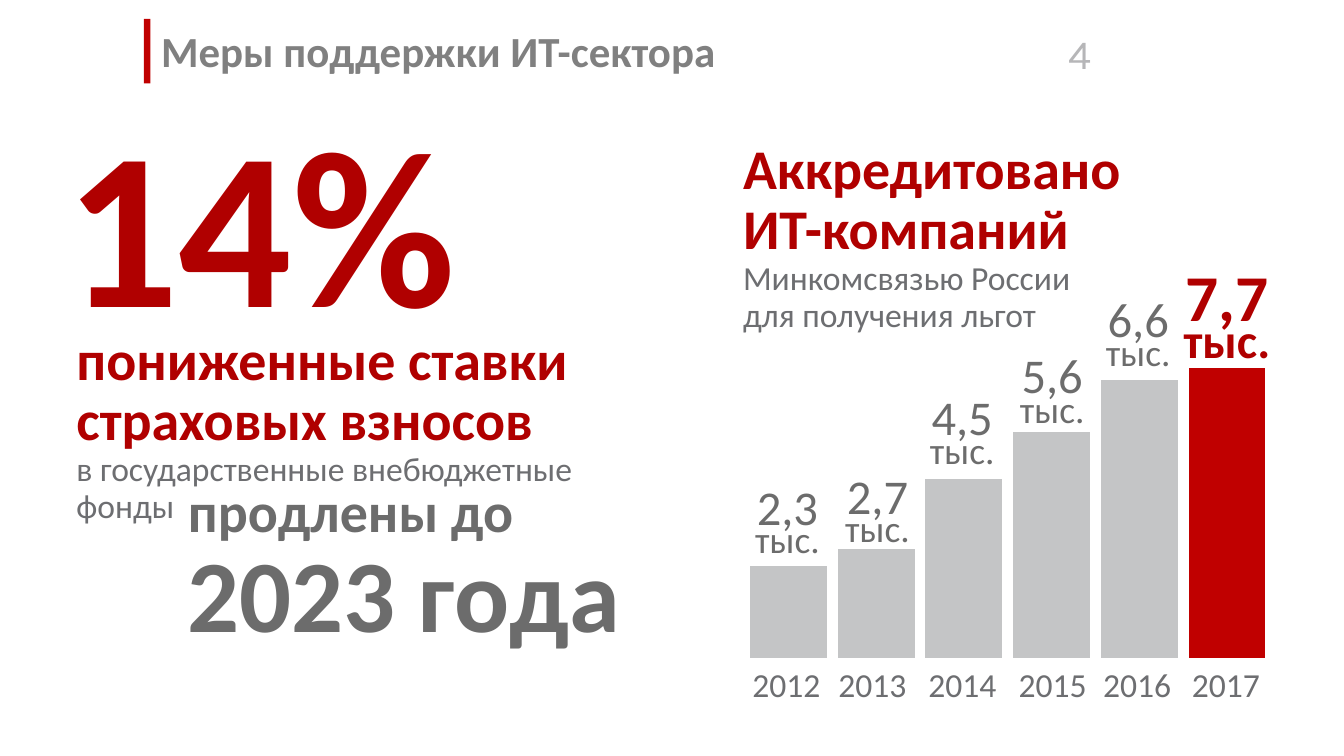
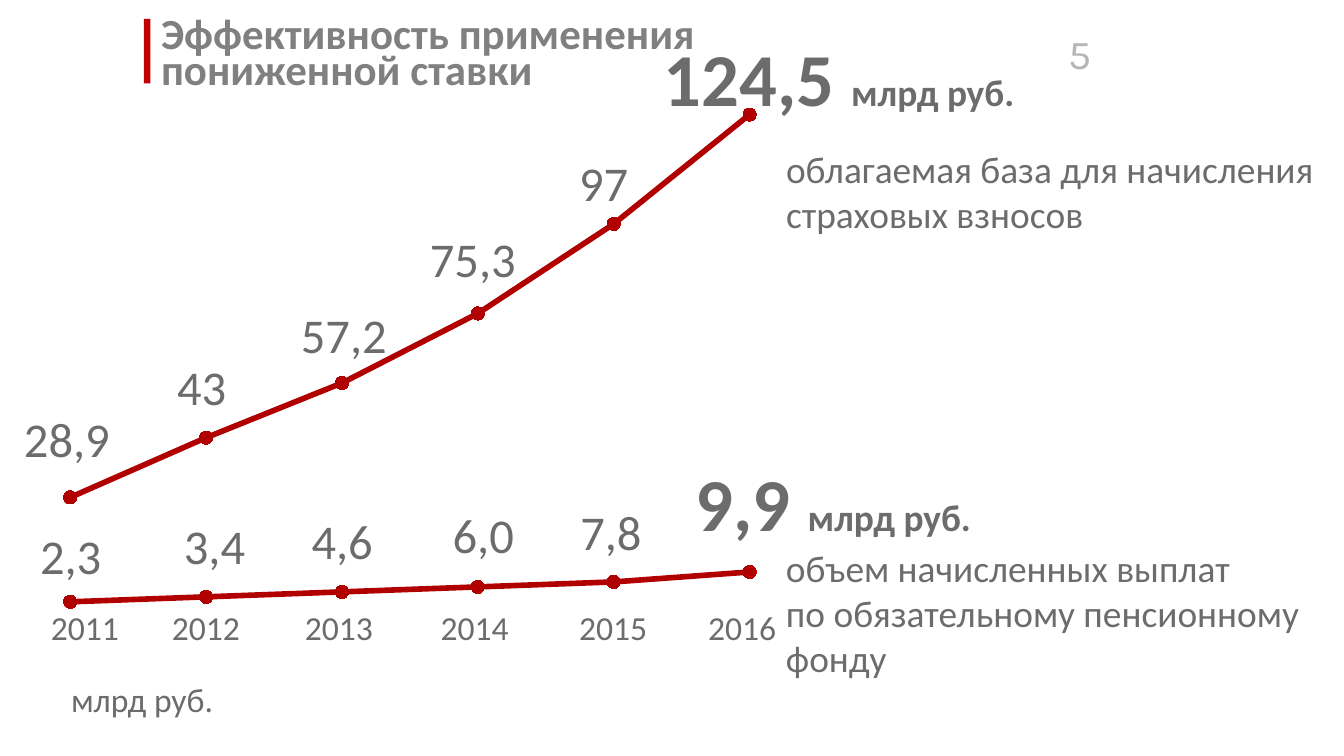
import dataclasses

import lxml.etree
import pptx
import pptx.chart.data
import pptx.dml.color
import pptx.enum.chart
import pptx.enum.shapes
import pptx.enum.text
import pptx.oxml.ns
import pptx.util

PX = 9144
GAP = chr(160)
ALIGN = pptx.enum.text.PP_ALIGN
ANCHOR = pptx.enum.text.MSO_ANCHOR
KIND = pptx.enum.chart.XL_CHART_TYPE


@dataclasses.dataclass(frozen=True)
class Theme:
    """Colours, fonts and type sizes of the deck."""
    face: str = "Calibri"
    digit: str = "Karla"
    mark: str = "C00000"
    red: str = "B00000"
    head: str = "808080"
    page: str = "B6B6B8"
    dark: str = "6C6C6C"
    gray: str = "6D6E71"
    bar: str = "C4C5C6"
    white: str = "FFFFFF"
    huge: int = 120
    year: int = 55
    total: int = 40
    peak: int = 35
    lead: int = 30
    value: int = 26
    title: int = 23
    number: int = 22
    note: int = 20
    small: int = 18


THEME = Theme()


def rgb(code):
    """Turn a hex code into a colour."""
    return pptx.dml.color.RGBColor.from_string(code)


def style(size, color, bold=False, name=THEME.face):
    """Return font values for a run or chart."""
    return dict(size=pptx.util.Pt(size), color=color, bold=bold, name=name)


def paint(font, values):
    """Set font values from a dict."""
    for key, value in values.items():
        if key == "color":
            font.color.rgb = rgb(value)
        else:
            setattr(font, key, value)


def place(box, x, y, w, h):
    """Return EMU lengths of a part, offset from its region."""
    return [n * PX for n in (box[0] + x, box[1] + y, w, h)]


def write(slide, spot, paras, gap=1.0, align=ALIGN.LEFT, wrap=True, grow=True):
    """Add a text box whose paragraphs are lists of (text, style) runs."""
    frame = slide.shapes.add_textbox(*spot).text_frame
    sizes = pptx.enum.text.MSO_AUTO_SIZE
    values = dict(word_wrap=wrap, vertical_anchor=ANCHOR.TOP,
                  auto_size=sizes.SHAPE_TO_FIT_TEXT if grow else sizes.NONE)
    for key, value in values.items():
        setattr(frame, key, value)
    for index, runs in enumerate(paras):
        para = frame.add_paragraph() if index else frame.paragraphs[0]
        para.alignment, para.line_spacing = align, gap
        for text, look in runs:
            run = para.add_run()
            run.text = text
            paint(run.font, look)
    return frame


def header(slide, box, title, number):
    """Draw the red mark, the title and the page number."""
    mark = slide.shapes.add_shape(pptx.enum.shapes.MSO_SHAPE.RECTANGLE,
                                  *place(box, 0, 4, 5, 48))
    mark.shadow.inherit = False
    mark.fill.solid()
    mark.fill.fore_color.rgb = rgb(THEME.mark)
    mark.line.fill.background()
    look = style(THEME.number, THEME.page, name=THEME.digit)
    page = write(slide, place(box, 653, 7, 59, 44), [[(number, look)]],
                 align=ALIGN.RIGHT, grow=False)
    for side in ("left", "right", "top", "bottom"):
        setattr(page, "margin_" + side, (7 if side in ("left", "right") else 4) * PX)
    look = style(THEME.title, THEME.head, True)
    name = write(slide, place(box, 3, 0, 587, 59), [[(title, look)]], 0.7, grow=False)
    name.vertical_anchor = ANCHOR.MIDDLE
    name.margin_top = 10 * PX


def plot(slide, box, kind, rows, area, top):
    """Add a bare chart with a fixed plot area and value range."""
    data = pptx.chart.data.CategoryChartData()
    data.categories = [str(n + 1) for n in range(len(rows[0]))]
    for index, row in enumerate(rows, 1):
        data.add_series(f"Series {index}", row)
    chart = slide.shapes.add_chart(kind, *place(box, 0, 0, *box[2:]), data).chart
    chart.has_legend = chart.has_title = False
    paint(chart.font, style(THEME.small, THEME.gray))
    for axis in (chart.category_axis, chart.value_axis):
        axis.visible = axis.has_major_gridlines = False
    chart.value_axis.minimum_scale, chart.value_axis.maximum_scale = 0, top
    chart.plots[0].vary_by_categories = False
    tag = pptx.oxml.ns.qn
    region = chart.element.find(".//" + tag("c:plotArea"))
    for old in region.findall(tag("c:layout")):
        region.remove(old)
    layout = lxml.etree.Element(tag("c:layout"))
    region.insert(0, layout)
    manual = lxml.etree.SubElement(layout, tag("c:manualLayout"))
    pairs = [("layoutTarget", "inner"), ("xMode", "edge"), ("yMode", "edge")]
    for key, value in pairs + list(zip("xywh", area)):
        lxml.etree.SubElement(manual, tag("c:" + key)).set("val", str(value))
    return chart


def years(slide, box, first, lefts, top, color):
    """Write the row of years under a chart."""
    for year, x in enumerate(lefts, first):
        write(slide, place(box, x, top, 71, 40),
              [[(str(year), style(THEME.small, color))]], wrap=False)


def rates(slide, box):
    """Write the reduced rate and its term."""
    red = style(THEME.lead, THEME.red, True)
    write(slide, place(box, 0, 0, 496, 176),
          [[("14%", style(THEME.huge, THEME.red, True))]], 0.8)
    write(slide, place(box, 8, 146, 445, 156),
          [[("пониженные ставки", red)], [("страховых взносов", red)],
           [("в государственные внебюджетные фонды", style(THEME.small, THEME.gray))]], 0.9)
    write(slide, place(box, 91, 259, 614, 139),
          [[("продлены до", style(THEME.lead, THEME.dark, True))],
           [("2023 года", style(THEME.year, THEME.dark, True))]], 0.9)


def firms(slide, box):
    """Draw the columns of accredited companies with their labels."""
    chart = plot(slide, box, KIND.COLUMN_CLUSTERED, [(32, 38, 62, 78, 96, 100)],
                 (0.05, 0.088, 0.888, 0.824), 111)
    chart.plots[0].gap_width = 12
    series = chart.plots[0].series[0]
    for part, color in ((series, THEME.bar), (series.points[5], THEME.mark)):
        part.format.fill.solid()
        part.format.fill.fore_color.rgb = rgb(color)
        part.format.line.color.rgb = rgb(THEME.white)
        part.format.line.width = pptx.util.Pt(0.75)
    years(slide, box, 2012, (18, 82, 149, 216, 279, 345), 265, THEME.gray)
    labels = [("2,3", 11, 141, 57, THEME.value), ("2,7", 78, 133, 57, THEME.value),
              ("4,5", 141, 71, 63, THEME.lead), ("5,6", 208, 40, 63, THEME.lead),
              ("6,6", 272, -2, 63, THEME.lead)]
    for value, x, y, h, space in labels:
        runs = [(value, style(THEME.value, THEME.dark)),
                (" ", style(space, THEME.dark)), ("тыс.", style(THEME.note, THEME.dark))]
        write(slide, place(box, x, y, 86, h), [runs], 0.6, ALIGN.CENTER)
    write(slide, place(box, 318, -18, 126, 72),
          [[("7,7", style(THEME.peak, THEME.red, True))],
           [("тыс.", style(THEME.value, THEME.red, True))]], 0.6, ALIGN.CENTER)
    small = style(THEME.small, THEME.gray)
    write(slide, place(box, 11, -124, 351, 156),
          [[("Аккредитовано ИТ-компаний", style(THEME.lead, THEME.red, True))],
           [("Минкомсвязью России", small)], [("для получения льгот", small)]], 0.9)


def growth(slide, box):
    """Draw the two lines of growth with their labels and notes."""
    chart = plot(slide, box, KIND.LINE_MARKERS,
                 [(23, 35, 46, 60, 78, 100), (2, 3, 4, 5, 6, 8)],
                 (0.02, 0.04, 0.96, 0.94), 110)
    for series in chart.plots[0].series:
        series.smooth = False
        series.format.line.color.rgb = rgb(THEME.red)
        series.format.line.width = pptx.util.Pt(3)
        marker = series.marker
        marker.style, marker.size = pptx.enum.chart.XL_MARKER_STYLE.CIRCLE, 7
        marker.format.fill.solid()
        marker.format.fill.fore_color.rgb = rgb(THEME.red)
        marker.format.line.color.rgb = rgb(THEME.red)
    years(slide, box, 2011, (39, 129, 228, 329, 432, 528), 416, THEME.dark)
    labels = [("28,9", 19, 284, 161), ("43", 133, 245, 63), ("57,2", 225, 206, 108),
              ("75,3", 321, 150, 95), ("97", 432, 93, 95), ("2,3", 31, 371, 94),
              ("3,4", 138, 363, 82), ("4,6", 233, 360, 93), ("6,0", 338, 355, 90),
              ("7,8", 433, 353, 90)]
    for value, x, y, w in labels:
        write(slide, place(box, x, y, w, 37),
              [[(value, style(THEME.value, THEME.dark))]], 0.6)
    for value, x, y, w in (("124,5 ", 495, 1, 299), ("9,9 ", 519, 317, 248)):
        write(slide, place(box, x, y, w, 64),
              [[(value, style(THEME.total, THEME.dark, True)),
                ("млрд руб.", style(THEME.note, THEME.dark, True))]], 0.8)
    notes = [(f"облагаемая база для{GAP}начисления страховых взносов", 73, 419, 77),
             (f"объем начисленных выплат по{GAP}обязательному пенсионному фонду",
              370, 417, 111)]
    for text, y, w, h in notes:
        write(slide, place(box, 586, y, w, h), [[(text, style(THEME.note, THEME.dark))]])
    write(slide, place(box, 54, 475, 161, 35),
          [[("млрд руб.", style(THEME.small, THEME.dark))]], 0.8)


def main():
    """Build and save the deck."""
    deck = pptx.Presentation()
    deck.slide_width = 1000 * PX
    deck.slide_height = deck.slide_width * 9 // 16
    pages = [("Меры поддержки ИТ-сектора", "4",
              [(rates, (39, 96, 705, 398)), (firms, (532, 224, 441, 292))]),
             ("Эффективность применения пониженной ставки", "5",
              [(growth, (-11, 31, 632, 433))])]
    for title, number, parts in pages:
        slide = deck.slides.add_slide(deck.slide_layouts[6])
        header(slide, (107, 10, 712, 59), title, number)
        for draw, box in parts:
            draw(slide, box)
    deck.save("out.pptx")


if __name__ == "__main__":
    main()
